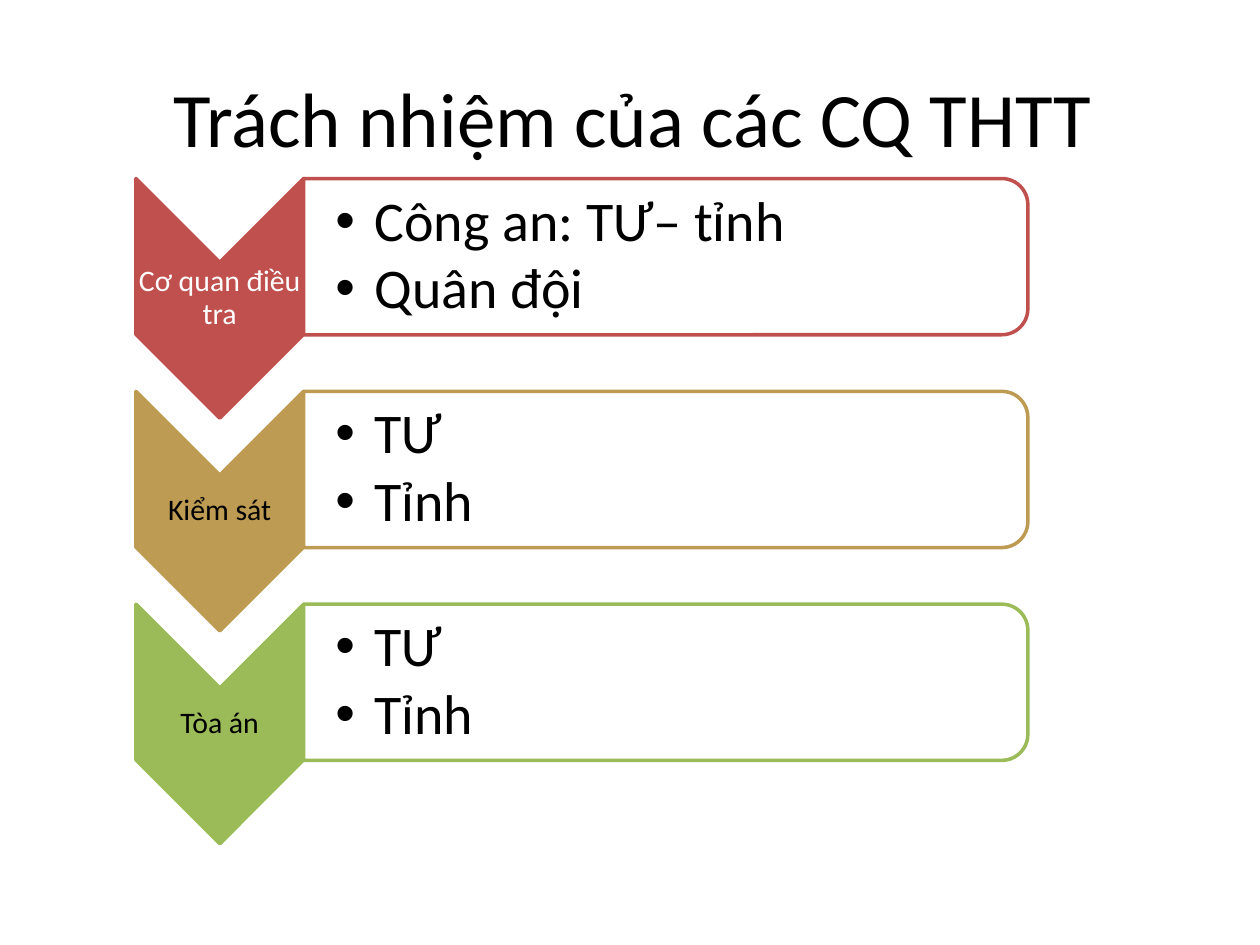
"""Build a slide of three chevron steps, each with a bulleted panel."""
from lxml import etree
from pptx import Presentation
from pptx import util as u
from pptx.dml import color
from pptx.enum import shapes, text
from pptx.oxml import ns

TITLE = "Trách nhiệm của các CQ THTT"
STEPS = [
    ("Cơ quan điều tra", "C0504D", "FFFFFF", ["Công an: TƯ– tỉnh", "Quân đội"]),
    ("Kiểm sát", "BD9B53", "000000", ["TƯ", "Tỉnh"]),
    ("Tòa án", "9BBB59", "000000", ["TƯ", "Tỉnh"]),
]
LEFT, TOP, PITCH = 2.74, 3.6, 4.29
WIDE, TALL = 3.38, 4.83
PANEL, HIGH = 14.6, 3.15
MID = text.PP_ALIGN.CENTER
HEAD = {"size": 44, "pad": (0.25, 0.13), "para": {"alignment": MID}}
LABEL = {"size": 17, "pad": (0.03, 0.03),
         "para": {"alignment": MID, "line_spacing": 0.9, "space_after": u.Pt(6)}}
LIST = {"size": 32, "pad": (0.64, 0.05), "dot": True,
        "para": {"line_spacing": 0.9, "space_after": u.Pt(4)}}


def paint(part, code):
    part.rgb = color.RGBColor.from_string(code)


def apply(item, values):
    for name, value in values.items():
        setattr(item, name, value)


def node(parent, tag, **attrs):
    return etree.SubElement(parent, ns.qn(tag), attrs)


def write(slide, box, lines, code, style):
    frame = slide.shapes.add_textbox(*map(u.Cm, box)).text_frame
    left, pad = map(u.Cm, style["pad"])
    apply(frame, {"word_wrap": True, "vertical_anchor": text.MSO_ANCHOR.MIDDLE,
                  "margin_left": left, "margin_right": pad,
                  "margin_top": pad, "margin_bottom": pad})
    frame.text = "\n".join(lines)
    for para in frame.paragraphs:
        apply(para, style["para"])
        font = para.runs[0].font
        apply(font, {"name": "Calibri", "size": u.Pt(style["size"])})
        paint(font.color, code)
        if style.get("dot"):
            props = para._p.get_or_add_pPr()
            dent = u.Cm(0.79)
            props.set("marL", str(dent))
            props.set("indent", str(-dent))
            node(props, "a:buFont", typeface="Arial")
            node(props, "a:buChar", char="•")


def turned(slide, kind, box, fill, edge):
    left, top, wide, tall = box
    spot = left + (wide - tall) / 2, top + (tall - wide) / 2, tall, wide
    shape = slide.shapes.add_shape(kind, *map(u.Cm, spot))
    shape.rotation = 90
    shape.shadow.inherit = False
    shape.fill.solid()
    paint(shape.fill.fore_color, fill)
    paint(shape.line.color, edge)
    shape.line.width = u.Pt(2)


def main():
    deck = Presentation()
    apply(deck, {"slide_width": u.Cm(25.4), "slide_height": u.Cm(19.05)})
    slide = deck.slides.add_slide(deck.slide_layouts[6])
    write(slide, (1.27, 0.76, 22.86, 3.18), [TITLE], "000000", HEAD)
    side = LEFT + WIDE
    for row, (label, hue, ink, points) in enumerate(STEPS):
        top = TOP + row * PITCH
        turned(slide, shapes.MSO_SHAPE.CHEVRON, (LEFT, top, WIDE, TALL), hue, hue)
        write(slide, (LEFT, top + WIDE / 2, WIDE, TALL - WIDE), [label], ink, LABEL)
        panel = side, top, PANEL, HIGH
        turned(slide, shapes.MSO_SHAPE.ROUND_2_SAME_RECTANGLE, panel, "FFFFFF", hue)
        write(slide, (side, top + 0.15, PANEL - 0.15, HIGH - 0.3), points, "000000", LIST)
    deck.save("out.pptx")


if __name__ == "__main__":
    main()
